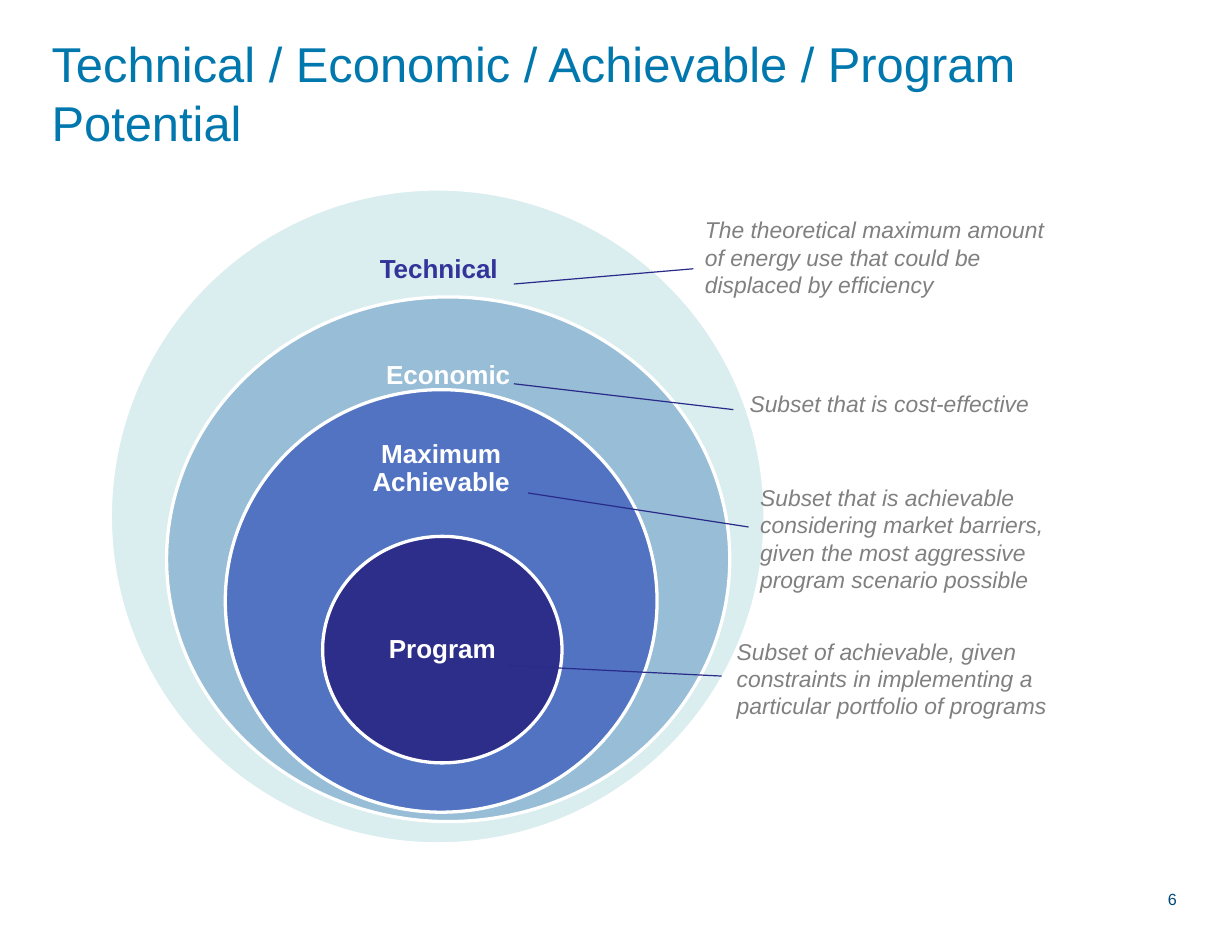
from dataclasses import dataclass

from lxml.etree import SubElement
from pptx import Presentation
from pptx.dml.color import RGBColor
from pptx.enum.shapes import MSO_CONNECTOR as LineKind, MSO_SHAPE as Shape
from pptx.enum.text import MSO_ANCHOR as Anchor, PP_ALIGN as Align
from pptx.oxml.ns import qn
from pptx.util import Inches, Pt


@dataclass(frozen=True)
class Theme:
    """Colours, font and type sizes of the slide."""
    font: str = "Arial"
    title: str = "0078AE"
    number: str = "004878"
    note: str = "808080"
    leader: str = "2A2A89"
    white: str = "FFFFFF"
    indigo: str = "333399"
    title_size: int = 30
    label_size: int = 16
    gap_size: int = 14
    note_size: int = 14
    number_size: int = 17


THEME = Theme()

RINGS = [
    ((0, 0, 5.58, 5.58), "DAEDEF", (2.02, 0.27, 1.56, 0.84), THEME.indigo, ["Technical"]),
    ((0.48, 0.92, 4.8, 4.47), "98BDD6", (2.04, 1.19, 1.68, 0.8), THEME.white, ["Economic"]),
    ((0.98, 1.71, 3.68, 3.6), "5273C1", (1.96, 1.98, 1.72, 0.81), THEME.white,
     ["Maximum", "Achievable"]),
    ((1.81, 2.96, 2.04, 1.93), "2D2D8A", (2.11, 3.45, 1.44, 0.96), THEME.white, ["Program"]),
]

NOTES = [
    ((0, 0, 3.16, 1.01), (-1.53, 0.63), (0, 0.5),
     "The theoretical maximum amount of energy use that could be displaced by efficiency"),
    ((0.38, 1.48, 2.84, 0.34), (-1.53, 1.48), (0.34, 1.7), "Subset that is cost-effective"),
    ((0.47, 2.28, 2.95, 1.28), (-1.41, 2.41), (0.47, 2.7),
     "Subset that is achievable considering market barriers, "
     "given the most aggressive program scenario possible"),
    ((0.27, 3.59, 2.89, 0.81), (-1.58, 3.88), (0.24, 3.97),
     "Subset of achievable, given constraints in implementing "
     "a particular portfolio of programs"),
]


def within(box, part):
    """Return the part's box in slide inches, given its offset in the outer box."""
    return (box[0] + part[0], box[1] + part[1], *part[2:])


def add_text(slide, box, insets, anchor=Anchor.TOP, align=Align.LEFT):
    """Add a wrapping text box and return its first paragraph."""
    frame = slide.shapes.add_textbox(*map(Inches, box)).text_frame
    frame.word_wrap = True
    frame.vertical_anchor = anchor
    frame.margin_left = frame.margin_right = Inches(insets[0])
    frame.margin_top = frame.margin_bottom = Inches(insets[1])
    paragraph = frame.paragraphs[0]
    paragraph.alignment = align
    return paragraph


def add_run(paragraph, text, size, color, bold=False, italic=False):
    """Append one styled run to the paragraph."""
    run = paragraph.add_run()
    run.text = text
    font = run.font
    font.name, font.size = THEME.font, Pt(size)
    font.bold, font.italic = bold, italic
    font.color.rgb = RGBColor.from_string(color)
    return run


def add_title(slide, box):
    """Place the slide title."""
    heading = add_text(slide, box, (0.11, 0.05), Anchor.MIDDLE)
    add_run(heading, "Technical / Economic / Achievable / Program Potential",
            THEME.title_size, THEME.title)


def add_page_number(slide, box):
    """Place the raised page number at the right."""
    footer = add_text(slide, box, (0.21, 0.21), align=Align.RIGHT)
    number = add_run(footer, "6", THEME.number_size, THEME.number)
    number.font._element.set("baseline", "30000")


def add_rings(slide, box):
    """Draw the nested potentials with their labels."""
    for ring_box, fill, label_box, color, words in RINGS:
        ring = slide.shapes.add_shape(Shape.OVAL, *map(Inches, within(box, ring_box)))
        ring.shadow.inherit = False
        ring.fill.solid()
        ring.fill.fore_color.rgb = RGBColor.from_string(fill)
        ring.line.color.rgb = RGBColor.from_string(THEME.white)
        ring.line.width = Pt(2)
        label = add_text(slide, within(box, label_box), (0.12, 0.12),
                         Anchor.MIDDLE, Align.CENTER)
        label.line_spacing = 0.9
        for index, word in enumerate(words):
            if index:
                add_run(label, " ", THEME.gap_size, color, bold=True)
            add_run(label, word, THEME.label_size, color, bold=True)


def add_leader(slide, start, end):
    """Draw a thin line from a ring to its note."""
    leader = slide.shapes.add_connector(LineKind.STRAIGHT, *map(Inches, (*start, *end)))
    leader.line.color.rgb = RGBColor.from_string(THEME.leader)
    leader.line.width = Pt(0.75)
    SubElement(leader._element.spPr, qn("a:effectLst"))


def add_notes(slide, box):
    """Place the definitions and the lines that tie them to the rings."""
    for note_box, start, end, text in NOTES:
        note = add_text(slide, within(box, note_box), (0.1, 0.05))
        add_run(note, text, THEME.note_size, THEME.note, italic=True)
        add_leader(slide, within(box, start), within(box, end))


def main():
    """Build and save the slide."""
    deck = Presentation()
    deck.slide_width, deck.slide_height = Inches(10.5), Inches(8)
    slide = deck.slides.add_slide(deck.slide_layouts[6])
    add_page_number(slide, (0.26, 7.41, 9.98, 0.62))
    add_title(slide, (0.33, 0.5, 9.83, 0.58))
    add_rings(slide, (0.94, 1.61))
    add_notes(slide, (5.91, 1.79))
    deck.save("out.pptx")


if __name__ == "__main__":
    main()
